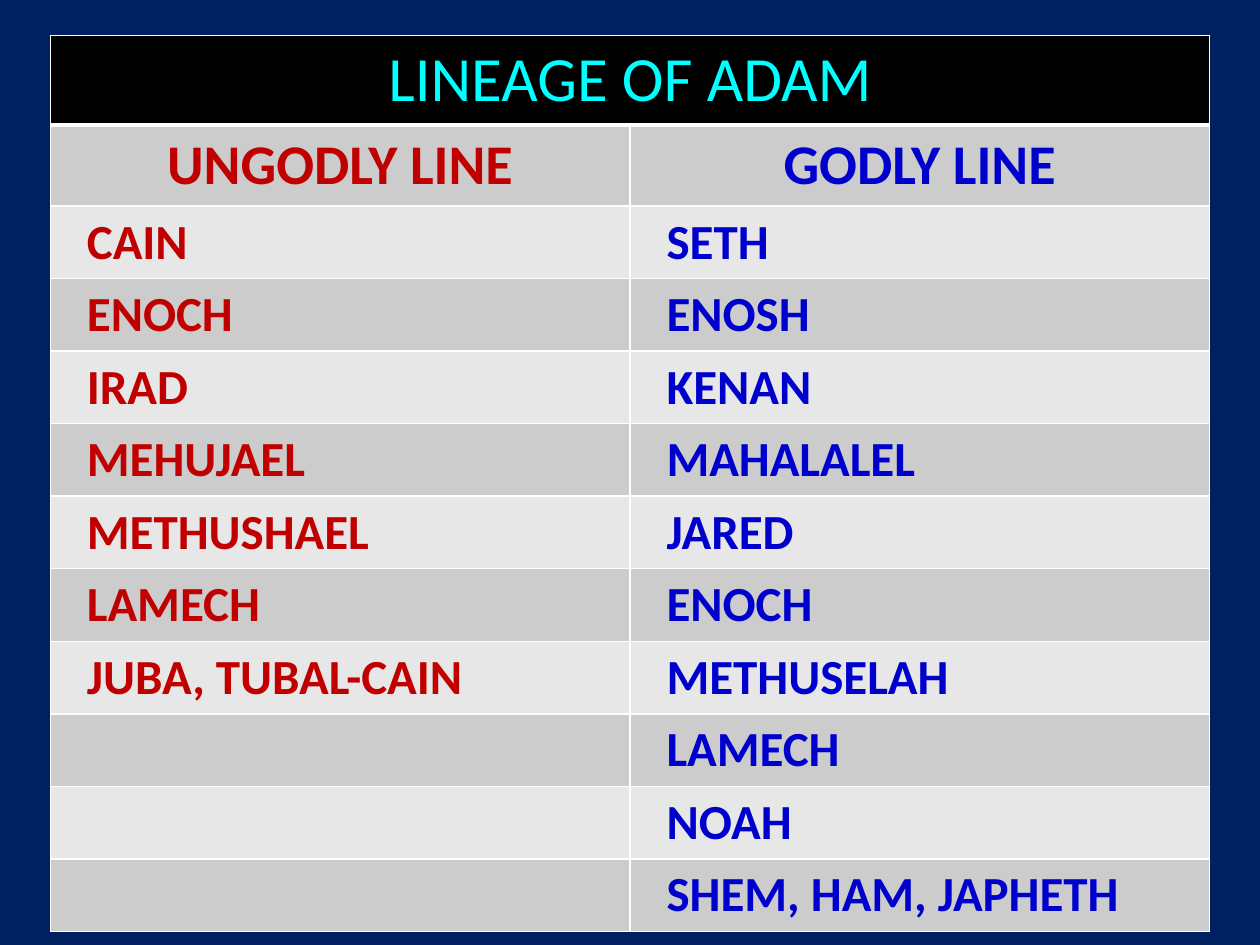
"""Build a slide with a two-column table of the lineage of Adam."""
from itertools import zip_longest

from lxml.etree import SubElement
from pptx import Presentation
from pptx.dml.color import RGBColor
from pptx.enum.text import PP_ALIGN
from pptx.oxml.ns import qn
from pptx.util import Inches, Pt

TITLE = "LINEAGE OF ADAM"
HEADINGS = ("UNGODLY LINE", "GODLY LINE")
UNGODLY = ["CAIN", "ENOCH", "IRAD", "MEHUJAEL", "METHUSHAEL", "LAMECH", "JUBA, TUBAL-CAIN"]
GODLY = ["SETH", "ENOSH", "KENAN", "MAHALALEL", "JARED", "ENOCH", "METHUSELAH",
         "LAMECH", "NOAH", "SHEM, HAM, JAPHETH"]

NAVY = RGBColor(0x00, 0x20, 0x60)
BLACK = RGBColor(0x00, 0x00, 0x00)
WHITE = RGBColor(0xFF, 0xFF, 0xFF)
CYAN = RGBColor(0x00, 0xFF, 0xFF)
RED = RGBColor(0xC0, 0x00, 0x00)
BLUE = RGBColor(0x00, 0x00, 0xCC)
DARK_BAND = RGBColor(0xCC, 0xCC, 0xCC)
LIGHT_BAND = RGBColor(0xE7, 0xE7, 0xE7)

LEFT, TOP, COLUMN_WIDTH = 0.4, 0.28, 4.6
TITLE_HEIGHT, HEADING_HEIGHT, NAME_HEIGHT = 0.71, 0.64, 0.57
NAME_INDENT = 0.19


def add_borders(cell, bottom_width):
    properties = cell._tc.get_or_add_tcPr()
    for side, width in (("L", 1), ("R", 1), ("T", 1), ("B", bottom_width)):
        line = SubElement(properties, qn(f"a:ln{side}"), w=str(Pt(width)))
        fill = SubElement(line, qn("a:solidFill"))
        SubElement(fill, qn("a:srgbClr"), val=str(WHITE))


def style_cell(cell, fill_color, bottom_width=1):
    add_borders(cell, bottom_width)
    cell.fill.solid()
    cell.fill.fore_color.rgb = fill_color


def write_cell(cell, text, size, color, bold=True, centered=True):
    paragraph = cell.text_frame.paragraphs[0]
    paragraph.text = text
    if centered:
        paragraph.alignment = PP_ALIGN.CENTER
    else:
        paragraph._p.get_or_add_pPr().set("marL", str(Inches(NAME_INDENT)))
    font = paragraph.runs[0].font
    font.name, font.size, font.bold = "Calibri", Pt(size), bold
    font.color.rgb = color


def main():
    presentation = Presentation()
    presentation.slide_width, presentation.slide_height = Inches(10), Inches(7.5)
    slide = presentation.slides.add_slide(presentation.slide_layouts[6])
    slide.background.fill.solid()
    slide.background.fill.fore_color.rgb = NAVY

    body = [HEADINGS, *zip_longest(UNGODLY, GODLY)]
    heights = [TITLE_HEIGHT, HEADING_HEIGHT] + [NAME_HEIGHT] * (len(body) - 1)
    table = slide.shapes.add_table(
        len(heights), 2, Inches(LEFT), Inches(TOP),
        Inches(2 * COLUMN_WIDTH), Inches(sum(heights))).table
    for column in table.columns:
        column.width = Inches(COLUMN_WIDTH)
    for row, height in zip(table.rows, heights):
        row.height = Inches(height)

    title_cell = table.cell(0, 0)
    title_cell.merge(table.cell(0, 1))
    for column_index in range(2):
        style_cell(table.cell(0, column_index), BLACK, bottom_width=3)
    write_cell(title_cell, TITLE, 36, CYAN, bold=False)

    for row_index, names in enumerate(body, start=1):
        is_heading = row_index == 1
        band = DARK_BAND if row_index % 2 else LIGHT_BAND
        for column_index, (name, color) in enumerate(zip(names, (RED, BLUE))):
            cell = table.cell(row_index, column_index)
            style_cell(cell, band)
            if name:
                write_cell(cell, name, 32 if is_heading else 28, color, centered=is_heading)

    presentation.save("out.pptx")


if __name__ == "__main__":
    main()
